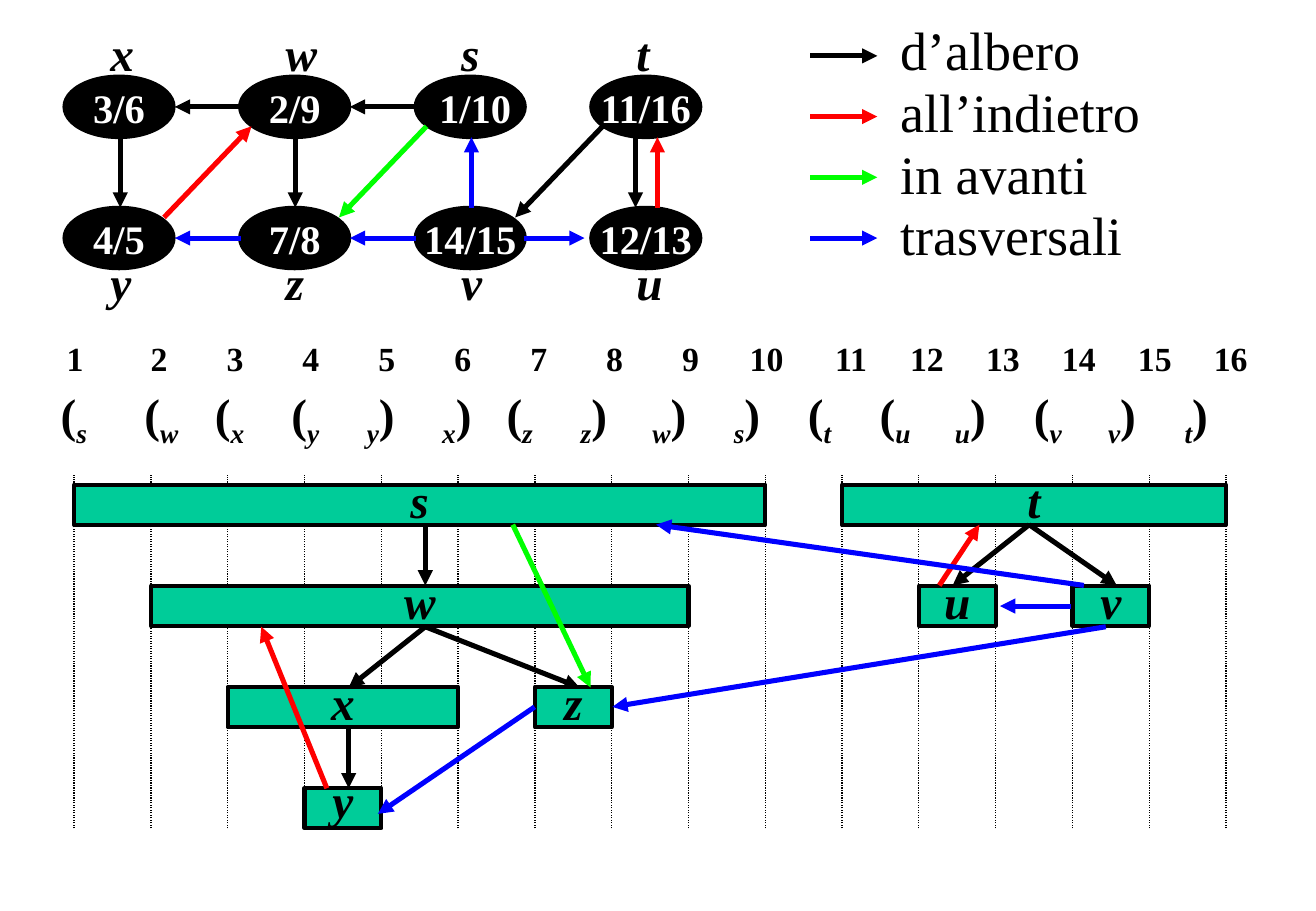
"""Depth-first search: edge classes, parenthesis structure and interval tree."""
from lxml.etree import SubElement
from pptx import Presentation
from pptx.dml.color import RGBColor as Rgb
from pptx.enum.dml import MSO_LINE as Dash
from pptx.enum.shapes import MSO_CONNECTOR as Link, MSO_SHAPE as Shape
from pptx.enum.text import MSO_ANCHOR as Anchor, PP_ALIGN as Align
from pptx.oxml.ns import qn
from pptx.util import Inches, Pt


class Theme:
    font = "Times New Roman"
    black = Rgb(0, 0, 0)
    white = Rgb(255, 255, 255)
    red = Rgb(255, 0, 0)
    green = Rgb(0, 255, 0)
    blue = Rgb(0, 0, 255)
    teal = Rgb(0, 204, 153)
    time, node, name, key = Pt(20), Pt(24), Pt(28), Pt(32)
    dot, rim, edge, bar = Pt(0.75), Pt(2.25), Pt(3), Pt(2.5)


def style(par, size, color=Theme.black, bold=True, italic=False):
    font = par.font
    font.name, font.size, font.bold, font.italic = Theme.font, size, bold, italic
    font.color.rgb = color


def link(start, end, color, width=Theme.edge, arrow=True):
    line = slide.shapes.add_connector(
        Link.STRAIGHT, *[Inches(v) for v in (*start, *end)])
    line.line.color.rgb, line.line.width = color, width
    props = line._element.spPr
    if arrow:
        SubElement(props.find(qn("a:ln")), qn("a:tailEnd"), type="triangle")
    else:
        line.line.dash_style = Dash.ROUND_DOT
    SubElement(props, qn("a:effectLst"))


deck = Presentation()
deck.slide_width, deck.slide_height = Inches(10.83), Inches(7.5)
slide = deck.slides.add_slide(deck.slide_layouts[6])
shapes = slide.shapes

boxes = []
graph = [("xwst", 0.63, 0.15, ["3/6", "2/9", " 1/10", "11/16"]),
         ("yzvu", 1.71, 2.04, ["4/5", "7/8", "14/15", "12/13"])]
for names, top, high, spans in graph:
    for col, (name, span) in enumerate(zip(names, spans)):
        left = 0.53 + 1.445 * col
        boxes.append((Shape.OVAL, left, top, 0.9, 0.5, span, Theme.black,
                      Theme.rim, Theme.node, Theme.white, None))
        label = shapes.add_textbox(Inches(0.81 + 1.443 * col), Inches(high),
                                   Inches(0.4), Inches(0.57))
        label.text_frame.word_wrap = False
        label.text_frame.text = name
        style(label.text_frame.paragraphs[0], Theme.name, italic=True)

step = 0.632
for tick in range(16):
    x = 0.61 + step * tick
    link((x, 6.82), (x, 3.91), Theme.black, Theme.dot, arrow=False)

bars = [("s", 1, 10, 0, 0.8), ("w", 2, 9, 1, 0.8), ("x", 3, 6, 2, 0.8),
        ("z", 7, 8, 2, 0.8), ("y", 4, 5, 3, 0.6), ("t", 11, 16, 0, 0.8),
        ("u", 12, 13, 1, 0.8), ("v", 14, 15, 1, 0.8)]
for name, first, last, depth, pitch in bars:
    boxes.append((Shape.RECTANGLE, 0.61 + step * (first - 1), 3.99 + 0.833 * depth,
                  step * (last - first), 0.33, name, Theme.teal, Theme.bar,
                  Theme.name, Theme.black, pitch))

for kind, left, top, wide, high, text, fill, rim, size, color, pitch in boxes:
    box = shapes.add_shape(kind, Inches(left), Inches(top), Inches(wide), Inches(high))
    box.shadow.inherit = False
    box.fill.solid()
    box.fill.fore_color.rgb = fill
    box.line.color.rgb, box.line.width = Theme.black, rim
    frame = box.text_frame
    frame.word_wrap, frame.vertical_anchor = False, Anchor.MIDDLE
    frame.text = text
    par = frame.paragraphs[0]
    par.alignment, par.line_spacing = Align.CENTER, pitch
    style(par, size, color, italic=kind == Shape.RECTANGLE)

edges = {
    Theme.black: [((0.99, 1.13), (0.99, 1.71)), ((2.43, 1.13), (2.43, 1.71)),
                  ((1.98, 0.88), (1.44, 0.88)), ((3.42, 0.88), (2.88, 0.88)),
                  ((5.23, 1.13), (5.23, 1.71)), ((4.96, 1.04), (4.24, 1.79)),
                  ((3.5, 4.32), (3.5, 4.82)), ((2.87, 5.99), (2.87, 6.49)),
                  ((3.5, 5.16), (2.87, 5.66)), ((3.5, 5.16), (4.77, 5.66)),
                  ((8.47, 4.32), (7.84, 4.82)), ((8.47, 4.32), (9.19, 4.82))],
    Theme.red: [((1.35, 1.79), (2.07, 1.04)), ((5.41, 1.71), (5.41, 1.13)),
                ((2.69, 6.49), (2.15, 5.16)), ((7.73, 4.82), (8.06, 4.32))],
    Theme.green: [((3.51, 1.04), (2.79, 1.79)), ((4.22, 4.32), (4.86, 5.66))],
    Theme.blue: [((1.98, 1.96), (1.44, 1.96)), ((3.42, 1.96), (2.88, 1.96)),
                 ((4.31, 1.96), (4.81, 1.96)), ((3.88, 1.71), (3.88, 1.13)),
                 ((4.4, 5.82), (3.11, 6.7)), ((9.1, 5.16), (5.04, 5.82)),
                 ((8.92, 4.82), (5.4, 4.32)), ((8.81, 4.99), (8.23, 4.99))],
}
for row, (color, pairs) in enumerate(edges.items()):
    y = 0.46 + 0.5 * row
    for start, end in [*pairs, ((6.67, y), (7.22, y))]:
        link(start, end, color)

key = shapes.add_textbox(Inches(7.31), Inches(0.13), Inches(2.18), Inches(2.13))
key.text_frame.word_wrap = False
key.text_frame.text = "d’albero\nall’indietro\nin avanti\ntrasversali"
for par in key.text_frame.paragraphs:
    par.line_spacing = 0.95
    style(par, Theme.key, bold=False)

times = [str(n) for n in range(1, 17)]
mids = [1.31 + 0.625 * n + (0.07 if n > 8 else 0) for n in range(15)]
marks = ["(s", "(w", "(x", "(y", "y)", "x)", "(z", "z)",
         "w)", "s)", "(t", "(u", "u)", "(v", "v)", "t)"]
lefts = [1.19, 1.77, 2.4, 3.02, 3.64, 4.17, 4.78, 5.37,
         6.04, 6.65, 7.24, 7.86, 8.51, 9.12, 9.75]
rows = [(times, mids, "ctr", 0.45, 2.73, 0.43, Theme.time),
        (marks, lefts, "l", 0.4, 3.12, 0.57, Theme.name)]
for items, stops, side, left, top, high, size in rows:
    box = shapes.add_textbox(Inches(left), Inches(top), Inches(10.05), Inches(high))
    box.text_frame.word_wrap = True
    par = box.text_frame.paragraphs[0]
    tabs = SubElement(par._p.get_or_add_pPr(), qn("a:tabLst"))
    for stop in stops:
        SubElement(tabs, qn("a:tab"), pos=str(Inches(stop - left - 0.1)), algn=side)
    style(par, size)
    for spot, item in enumerate(items):
        for place, part in enumerate(item if side == "l" else [item]):
            run = par.add_run()
            run.text = "\t" + part if spot and not place else part
            if part.isalpha():
                run.font.italic = True
                run._r.get_or_add_rPr().set("baseline", "-25000")

deck.save("out.pptx")
